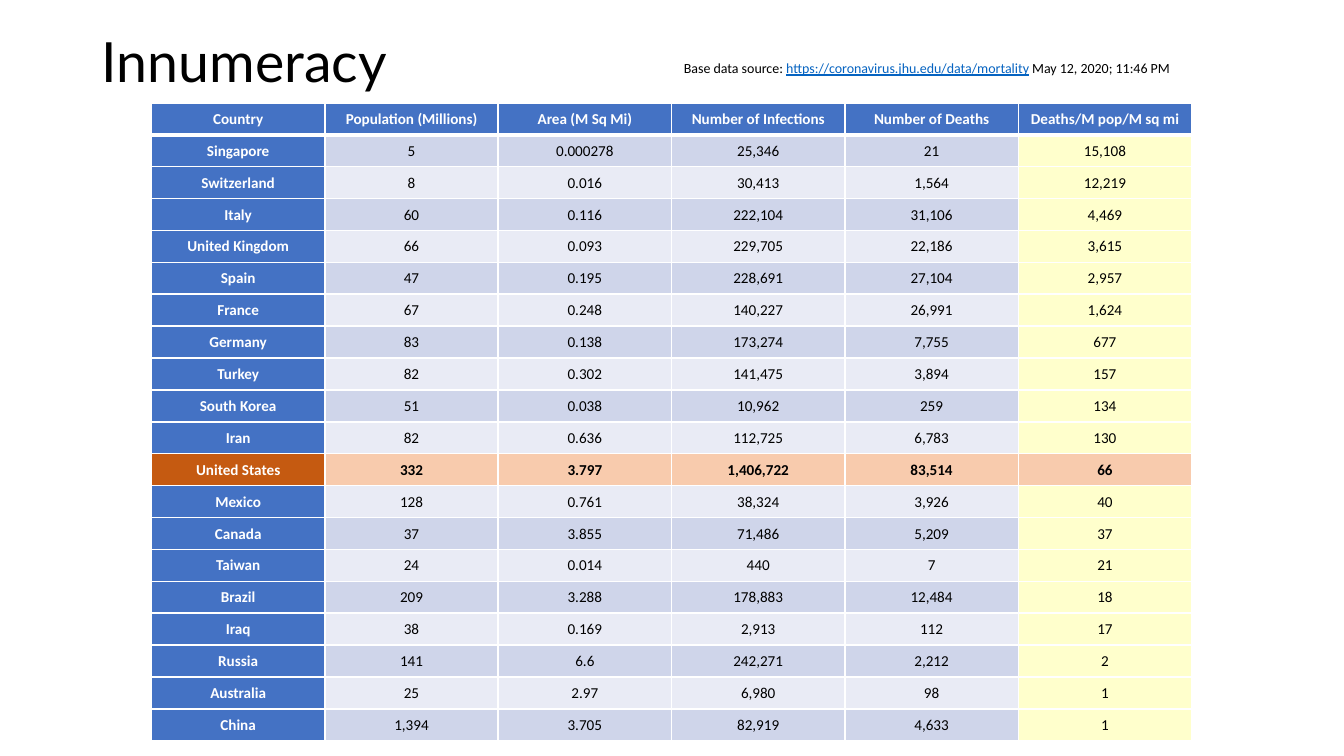
from dataclasses import dataclass

from lxml.etree import SubElement
from pptx import Presentation
from pptx.dml.color import RGBColor
from pptx.enum.text import MSO_ANCHOR, MSO_AUTO_SIZE, PP_ALIGN
from pptx.oxml.ns import qn
from pptx.util import Cm, Pt


@dataclass(frozen=True)
class Theme:
    """Colours, fonts and type sizes of the slide."""
    black: str = "000000"
    white: str = "FFFFFF"
    link: str = "0563C1"
    heading: str = "4472C4"
    bands: tuple = ("E9EBF5", "CFD5EA")
    ratio: str = "FFFFCC"
    focus_heading: str = "C55A11"
    focus: str = "F8CBAD"
    title_font: str = "Lato"
    body_font: str = "Calibri"
    title_size: float = 33
    source_size: float = 8.3
    table_size: float = 9


THEME = Theme()
FOCUS_COUNTRY = "United States"
HEADINGS = ("Country", "Population (Millions)", "Area (M Sq Mi)",
            "Number of Infections", "Number of Deaths", "Deaths/M pop/M sq mi")
COUNTRIES = (
    ("Singapore", "5", "0.000278", "25,346", "21", "15,108"),
    ("Switzerland", "8", "0.016", "30,413", "1,564", "12,219"),
    ("Italy", "60", "0.116", "222,104", "31,106", "4,469"),
    ("United Kingdom", "66", "0.093", "229,705", "22,186", "3,615"),
    ("Spain", "47", "0.195", "228,691", "27,104", "2,957"),
    ("France", "67", "0.248", "140,227", "26,991", "1,624"),
    ("Germany", "83", "0.138", "173,274", "7,755", "677"),
    ("Turkey", "82", "0.302", "141,475", "3,894", "157"),
    ("South Korea", "51", "0.038", "10,962", "259", "134"),
    ("Iran", "82", "0.636", "112,725", "6,783", "130"),
    (FOCUS_COUNTRY, "332", "3.797", "1,406,722", "83,514", "66"),
    ("Mexico", "128", "0.761", "38,324", "3,926", "40"),
    ("Canada", "37", "3.855", "71,486", "5,209", "37"),
    ("Taiwan", "24", "0.014", "440", "7", "21"),
    ("Brazil", "209", "3.288", "178,883", "12,484", "18"),
    ("Iraq", "38", "0.169", "2,913", "112", "17"),
    ("Russia", "141", "6.6", "242,271", "2,212", "2"),
    ("Australia", "25", "2.97", "6,980", "98", "1"),
    ("China", "1,394", "3.705", "82,919", "4,633", "1"),
)


def add_run(paragraph, text, size, color, font=THEME.body_font, bold=False, underline=False):
    """Append one formatted run to a paragraph."""
    run = paragraph.add_run()
    run.text = text
    run.font.name = font
    run.font.size = Pt(size)
    run.font.bold = bold
    run.font.underline = underline
    run.font.color.rgb = RGBColor.from_string(color)


def set_insets(frame, across, down):
    """Set equal side insets and equal top and bottom insets."""
    frame.margin_left = frame.margin_right = Cm(across)
    frame.margin_top = frame.margin_bottom = Cm(down)


def place_title(slide, text):
    """Move and format the title placeholder."""
    title = slide.shapes.title
    title.left, title.top, title.width, title.height = Cm(1.93), Cm(0.84), Cm(24.33), Cm(1.02)
    frame = title.text_frame
    set_insets(frame, 0.21, 0.11)
    frame.auto_size = MSO_AUTO_SIZE.NONE
    frame.vertical_anchor = MSO_ANCHOR.MIDDLE
    paragraph = frame.paragraphs[0]
    paragraph.alignment = PP_ALIGN.LEFT
    paragraph.line_spacing = 0.9
    add_run(paragraph, text, THEME.title_size, THEME.black, THEME.title_font)


def add_source(slide):
    """Add the data source line above the table."""
    frame = slide.shapes.add_textbox(Cm(14.15), Cm(1.14), Cm(10.9), Cm(0.61)).text_frame
    frame.word_wrap = True
    frame.auto_size = MSO_AUTO_SIZE.SHAPE_TO_FIT_TEXT
    set_insets(frame, 0.21, 0.11)
    paragraph = frame.paragraphs[0]
    add_run(paragraph, "Base data source: ", THEME.source_size, THEME.black)
    add_run(paragraph, "https://coronavirus.jhu.edu/data/mortality",
            THEME.source_size, THEME.link, underline=True)
    add_run(paragraph, " May 12, 2020; 11:46 PM", THEME.source_size, THEME.black)


def set_borders(cell, bottom):
    """Draw white cell borders, with a chosen bottom width in points."""
    properties = cell._tc.get_or_add_tcPr()
    for side, points in (("L", 1), ("R", 1), ("T", 1), ("B", bottom)):
        line = SubElement(properties, qn(f"a:ln{side}"), w=str(Pt(points)))
        fill = SubElement(line, qn("a:solidFill"))
        SubElement(fill, qn("a:srgbClr"), val=THEME.white)


def cell_fill(row, column, country):
    """Choose a cell's fill from its place and its country."""
    focused = country == FOCUS_COUNTRY
    if row == 0 or column == 0:
        return THEME.focus_heading if focused else THEME.heading
    if focused:
        return THEME.focus
    if column == len(HEADINGS) - 1:
        return THEME.ratio
    return THEME.bands[row % 2]


def fill_cell(cell, text, fill, is_heading, bold, bottom):
    """Format one table cell and write its text."""
    set_borders(cell, bottom)
    cell.fill.solid()
    cell.fill.fore_color.rgb = RGBColor.from_string(fill)
    cell.vertical_anchor = MSO_ANCHOR.MIDDLE
    set_insets(cell, 0.02, 0.02)
    cell.margin_bottom = 0
    paragraph = cell.text_frame.paragraphs[0]
    paragraph.alignment = PP_ALIGN.CENTER
    color = THEME.white if is_heading else THEME.black
    add_run(paragraph, text, THEME.table_size, color, bold=bold)


def add_country_table(slide):
    """Add the table of countries with its heading row and column."""
    records = (HEADINGS, *COUNTRIES)
    column_width, row_height = Cm(3.64), Cm(0.67)
    table = slide.shapes.add_table(
        len(records), len(HEADINGS), Cm(3.18), Cm(2.16),
        column_width * len(HEADINGS), row_height * len(records)).table
    table.first_col = True
    table.horz_banding = False
    for column in table.columns:
        column.width = column_width
    for row, record in enumerate(records):
        table.rows[row].height = row_height
        country = record[0]
        for column, text in enumerate(record):
            is_heading = row == 0 or column == 0
            fill_cell(table.cell(row, column), text, cell_fill(row, column, country),
                      is_heading, is_heading or country == FOCUS_COUNTRY,
                      3 if row == 0 else 1)


def main():
    """Build the slide and save it."""
    deck = Presentation()
    deck.slide_width, deck.slide_height = Cm(28.22), Cm(15.88)
    slide = deck.slides.add_slide(deck.slide_layouts[5])
    place_title(slide, "Innumeracy")
    add_country_table(slide)
    add_source(slide)
    deck.save("out.pptx")


if __name__ == "__main__":
    main()
